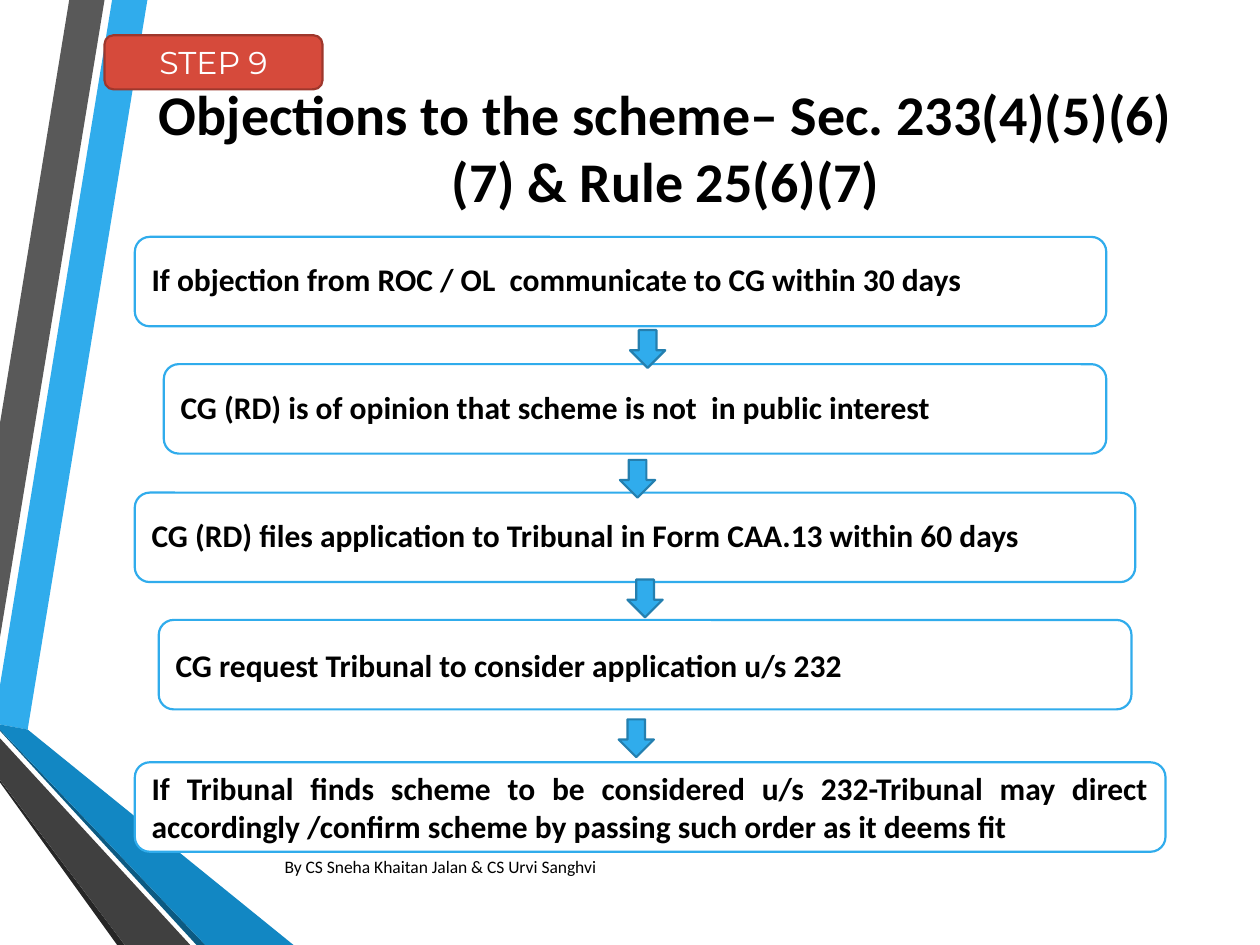
from pptx import Presentation
from pptx.dml.color import RGBColor
from pptx.enum.shapes import MSO_SHAPE
from pptx.enum.text import MSO_ANCHOR, MSO_AUTO_SIZE, PP_ALIGN
from pptx.util import Inches, Pt

ROUNDED, ARROW = MSO_SHAPE.ROUNDED_RECTANGLE, MSO_SHAPE.DOWN_ARROW
LEFT, CENTER, JUSTIFY = PP_ALIGN.LEFT, PP_ALIGN.CENTER, PP_ALIGN.JUSTIFY
MIDDLE = MSO_ANCHOR.MIDDLE
NO_FIT = MSO_AUTO_SIZE.NONE
TITLE_ONLY = 5
COLORS = {
    "black": "000000", "white": "FFFFFF", "blue": "30ACEC",
    "arrow edge": "247FAF", "red": "D64A3B", "red edge": "9E372C",
    "gray": "595959", "dark gray": "404040", "charcoal": "262626",
    "deep blue": "1287C3", "navy": "0C5A82",
}

deck = Presentation()
deck.slide_width, deck.slide_height = Inches(10), Inches(7.5)
column, row = deck.slide_width / 100, deck.slide_height / 75
page = deck.slides.add_slide(deck.slide_layouts[TITLE_ONLY])


def write(shape, text, size=18, font="Calibri", color="black", bold=False,
          align=LEFT, spacing=1.0):
    frame = shape.text_frame
    frame.word_wrap = True
    frame.auto_size = NO_FIT
    frame.vertical_anchor = MIDDLE
    para = frame.paragraphs[0]
    para.alignment = align
    para.line_spacing = spacing
    span = para.add_run()
    span.text = text
    span.font.size = Pt(size)
    span.font.name = font
    span.font.bold = bold
    span.font.color.rgb = RGBColor.from_string(COLORS[color])


def paint(shape, fill, edge=None):
    shape.shadow.inherit = False
    shape.fill.solid()
    shape.fill.fore_color.rgb = RGBColor.from_string(COLORS[fill])
    if edge:
        shape.line.color.rgb = RGBColor.from_string(COLORS[edge])
        shape.line.width = Pt(1.25)
    else:
        shape.line.fill.background()


ribbons = [
    ("blue", [(0, 54.4), (0, 57.5), (2.2, 57.9), (11.7, 0), (8.9, 0)]),
    ("gray", [(8.3, 0), (5.5, 0), (0, 33.6), (0, 50.6)]),
    ("charcoal", [(0, 61.9), (0, 62.1), (9.3, 75), (9.9, 75)]),
    ("navy", [(0, 57.9), (0, 58), (15.6, 75), (16.3, 75)]),
    ("deep blue", [(0, 57.9), (16.3, 75), (23.3, 75), (2.2, 57.9), (0, 57.5)]),
    ("dark gray", [(0, 61.9), (9.9, 75), (15.1, 75), (0, 58.6)]),
]
for color, corners in ribbons:
    points = [(x * column, y * row) for x, y in corners]
    outline = page.shapes.build_freeform(*points[0])
    outline.add_line_segments(points[1:])
    paint(outline.convert_to_shape(), color)

title = page.shapes.title
title.left, title.top = int(10.7 * column), int(5 * row)
title.width, title.height = int(84.3 * column), int(13.3 * row)
write(title, "Objections to the scheme– Sec. 233(4)(5)(6)(7) & Rule 25(6)(7)",
      size=32, bold=True, align=CENTER)

credit = page.shapes.add_textbox(int(21.6 * column), int(66.8 * row),
                                 int(58.1 * column), int(4 * row))
write(credit, "By CS Sneha Khaitan Jalan & CS Urvi Sanghvi", size=10)

badge = page.shapes.add_shape(ROUNDED, int(8.3 * column), int(2.8 * row),
                              int(17.3 * column), int(4.3 * row))
paint(badge, "red", "red edge")
write(badge, "STEP 9", font="Montserrat", color="white", align=CENTER)

steps = [
    (10.7, 18.8, 77.1, 0.9,
     "If objection from ROC / OL  communicate to CG within 30 days"),
    (13, 28.9, 74.8, 0.9,
     "CG (RD) is of opinion that scheme is not  in public interest"),
    (10.7, 39.1, 79.4, 0.9,
     "CG (RD) files application to Tribunal in Form CAA.13 within 60 days "),
    (12.6, 49.2, 77.2, 1.0,
     "CG request Tribunal to consider application u/s 232"),
    (10.7, 60.5, 81.8, 1.0,
     "If Tribunal finds scheme to be considered u/s 232-Tribunal may direct "
     "accordingly /confirm scheme by passing such order as it deems fit"),
]
for left, top, width, spacing, text in steps:
    box = page.shapes.add_shape(ROUNDED, int(left * column), int(top * row),
                                int(width * column), int(7.1 * row))
    paint(box, "white", "blue")
    write(box, text, bold=True, align=JUSTIFY, spacing=spacing)

for left, top in [(50, 26.2), (49.2, 36.5), (49.8, 46), (49.1, 57.1)]:
    arrow = page.shapes.add_shape(ARROW, int(left * column), int(top * row),
                                  int(2.8 * column), int(3 * row))
    paint(arrow, "blue", "arrow edge")

deck.save("out.pptx")
